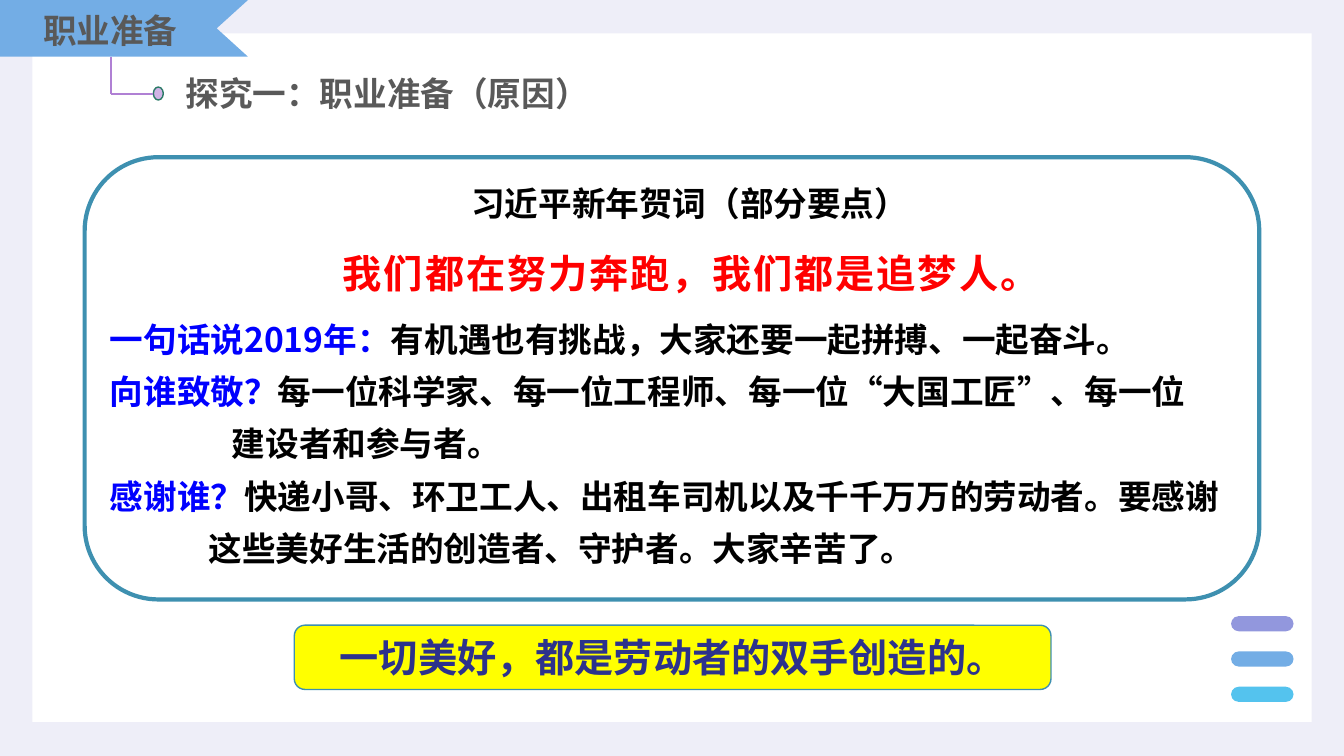
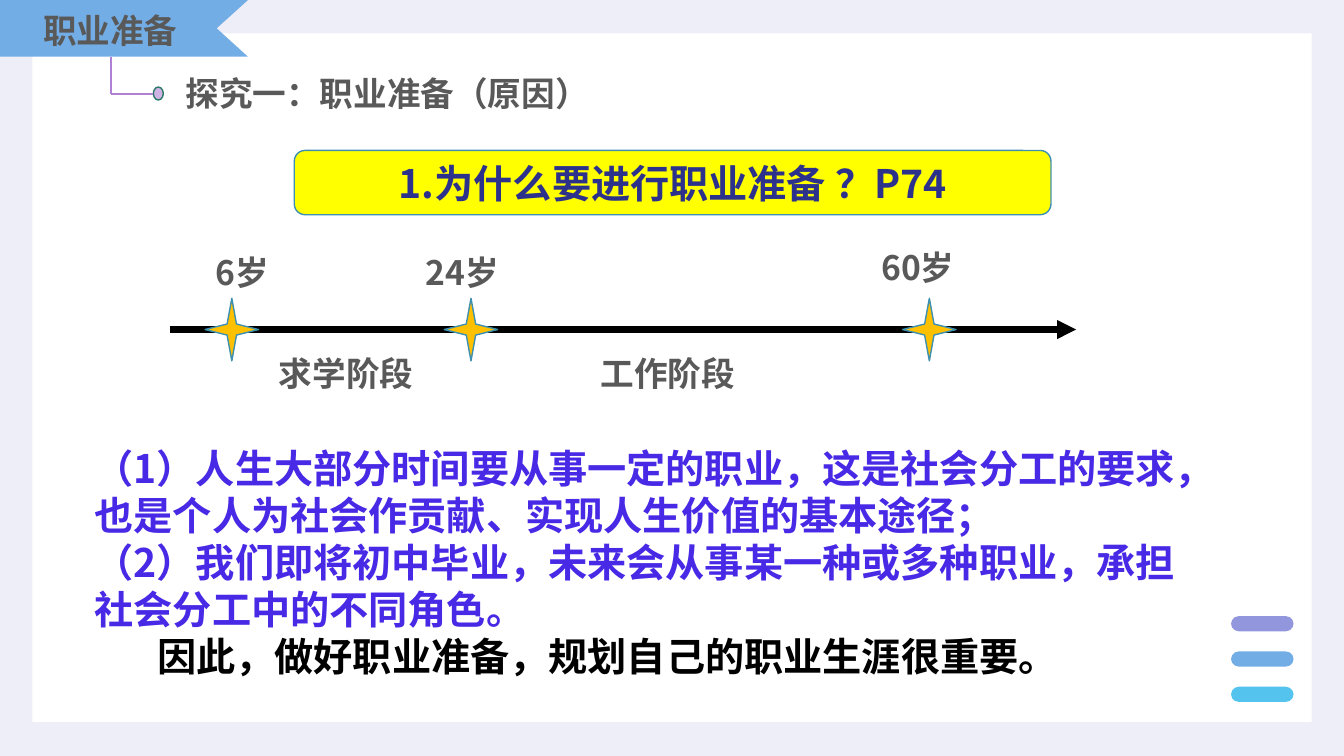
from dataclasses import dataclass

from pptx import Presentation
from pptx.dml.color import RGBColor as RGB
from pptx.enum.shapes import MSO_CONNECTOR as Link, MSO_SHAPE as Kind
from pptx.enum.text import MSO_ANCHOR as Anchor, MSO_AUTO_SIZE as Fit, PP_ALIGN as Align
from pptx.oxml.ns import qn
from pptx.util import Inches, Pt
from lxml.etree import SubElement

FONT = "Noto Sans CJK SC"
PALE = RGB(0xEE, 0xEE, 0xF8)
WHITE = RGB(0xFF, 0xFF, 0xFF)
BLACK = RGB(0, 0, 0)
GREY = RGB(0x59, 0x59, 0x59)
SKY = RGB(0x73, 0xAD, 0xE5)
CYAN = RGB(0x54, 0xC3, 0xEE)
LILAC = RGB(0x92, 0x97, 0xDD)
MAUVE = RGB(0xB0, 0x80, 0xD4)
PINK = RGB(0xD0, 0xB3, 0xE5)
GREEN = RGB(0x2B, 0x7A, 0x67)
TEAL = RGB(0x3E, 0x90, 0xB0)
YELLOW = RGB(0xFF, 0xFF, 0)
GOLD = RGB(0xFF, 0xC0, 0)
RED = RGB(0xFF, 0, 0)
BLUE = RGB(0, 0, 0xFF)
NAVY = RGB(0x2C, 0x32, 0x8C)
VIOLET = RGB(0x48, 0x29, 0xE5)


@dataclass
class Box:
    """An area in inches; areas inside it are given in percent of it."""
    left: float
    top: float
    wide: float
    high: float

    def spot(self, x, y):
        return self.left + self.wide * x / 100, self.top + self.high * y / 100

    def area(self, x, y, w, h):
        return Box(*self.spot(x, y), self.wide * w / 100, self.high * h / 100)

    def emu(self):
        return [Inches(v) for v in (self.left, self.top, self.wide, self.high)]


PAGE = Box(0, 0, 13.33, 7.5)


def write(frame, *paras, size=24, color=GREY, align=Align.LEFT,
          anchor=Anchor.TOP, lead=None, kern=0):
    """Each paragraph is a string or (indent in inches, (text, colour), ...)."""
    frame.word_wrap = True
    frame.auto_size = Fit.NONE
    frame.vertical_anchor = anchor
    for i, item in enumerate(paras):
        para = frame.add_paragraph() if i else frame.paragraphs[0]
        indent, *runs = (0, (item, color)) if isinstance(item, str) else item
        para.alignment = align
        if lead:
            para.line_spacing = lead
        if indent:
            para._p.get_or_add_pPr().set("marL", str(Inches(indent)))
        for text, tint in runs:
            run = para.add_run()
            run.text = text
            font = run.font
            font.name, font.size, font.bold = FONT, Pt(size), True
            font.color.rgb = tint
            props = run._r.get_or_add_rPr()
            if kern:
                props.set("spc", str(kern))
            SubElement(props, qn("a:ea")).set("typeface", FONT)


def label(slide, box, *paras, **style):
    write(slide.shapes.add_textbox(*box.emu()).text_frame, *paras, **style)


def paint(shape, fill=None, line=None, width=1):
    shape.shadow.inherit = False
    if fill is None:
        shape.fill.background()
    else:
        shape.fill.solid()
        shape.fill.fore_color.rgb = fill
    if line is None:
        shape.line.fill.background()
    else:
        shape.line.color.rgb = line
        shape.line.width = Pt(width)
    return shape


def draw(slide, kind, box, **look):
    return paint(slide.shapes.add_shape(kind, *box.emu()), **look)


def rule(slide, start, end, color, width, arrow=False):
    ends = [Inches(v) for v in (*start, *end)]
    line = slide.shapes.add_connector(Link.STRAIGHT, *ends)
    line.line.color.rgb = color
    line.line.width = Pt(width)
    props = line._element.spPr
    if arrow:
        SubElement(props.find(qn("a:ln")), qn("a:tailEnd")).set("type", "triangle")
    SubElement(props, qn("a:effectLst"))


def dress(deck, layout):
    """Put the white panel and the three pills on the layout."""
    back = deck.slide_master.background.fill
    back.solid()
    back.fore_color.rgb = PALE
    slide = deck.slides[0]
    items = [draw(slide, Kind.RECTANGLE, PAGE.area(2.4, 4.4, 95.2, 91.1), fill=WHITE)]
    for i, tint in enumerate((LILAC, SKY, CYAN)):
        pill = draw(slide, Kind.ROUNDED_RECTANGLE,
                    PAGE.area(91.6, 81.5 + 4.67 * i, 4.65, 2), fill=tint)
        pill.adjustments[0] = 0.5
        items.append(pill)
    for item in items:
        layout.shapes.element.append(item._element)


def ribbon(slide, box, text):
    pts = [box.spot(*p) for p in ((0, 0), (100, 0), (87.4, 50), (100, 100), (0, 100))]
    pts = [(Inches(x), Inches(y)) for x, y in pts]
    edge = slide.shapes.build_freeform(*pts[0])
    edge.add_line_segments(pts[1:], close=True)
    paint(edge.convert_to_shape(), fill=SKY)
    label(slide, box.area(4, 9, 81, 89), text, align=Align.CENTER)


def elbow(slide, box):
    bend = box.spot(0, 86)
    draw(slide, Kind.FLOWCHART_CONNECTOR, box.area(81, 70, 19, 30),
         fill=PINK, line=GREEN)
    rule(slide, box.spot(0, 0), bend, MAUVE, 1.5)
    rule(slide, bend, box.spot(81, 86), MAUVE, 1.5)


def head(slide):
    title = slide.shapes.title
    spot = PAGE.area(13.05, 8.93, 63.5, 6.7)
    title.left, title.top, title.width, title.height = spot.emu()
    write(title.text_frame, "探究一：职业准备（原因）")
    ribbon(slide, PAGE.area(0, 0, 18.45, 7.5), "职业准备")
    elbow(slide, PAGE.area(8.25, 7.5, 3.9, 5.73))


def banner(slide, box, text):
    plate = draw(slide, Kind.ROUNDED_RECTANGLE, box, fill=YELLOW, line=TEAL)
    write(plate.text_frame, text, size=28, color=NAVY,
          align=Align.CENTER, anchor=Anchor.MIDDLE)


def card(slide, box):
    label(slide, box.area(29.3, 2, 44.4, 14), "习近平新年贺词（部分要点）",
          color=BLACK, align=Align.CENTER, lead=1.3)
    label(slide, box.area(14.1, 16.4, 64.9, 16.2),
          (0.82, ("我们都在努力奔跑，我们都是追梦人。", RED)),
          size=28, lead=1.3, kern=140)
    label(slide, box.area(1.3, 32.6, 98, 62),
          (0, ("一句话说2019年：", BLUE),
           ("有机遇也有挑战，大家还要一起拼搏、一起奋斗。", BLACK)),
          (0, ("向谁致敬？", BLUE),
           ("每一位科学家、每一位工程师、每一位“大国工匠”、每一位", BLACK)),
          (1.21, ("建设者和参与者。", BLACK)),
          (0, ("感谢谁？", BLUE),
           ("快递小哥、环卫工人、出租车司机以及千千万万的劳动者。要感谢", BLACK)),
          (0.98, ("这些美好生活的创造者、守护者。大家辛苦了。", BLACK)),
          lead=1.3)
    draw(slide, Kind.ROUNDED_RECTANGLE, box, line=TEAL, width=3)


def axis(slide, box):
    """Time line with a star and an age at each turn, and stages between."""
    mid = 56
    rule(slide, box.spot(0, mid), box.spot(100, mid), BLACK, 4.5, arrow=True)
    for x, left, top, age in ((6.8, 3.9, 3.5, "6岁"), (33.2, 27.1, 3.5, "24岁"),
                              (83.8, 77.4, 0, "60岁")):
        draw(slide, Kind.STAR_4_POINT, box.area(x - 2.95, mid - 20, 5.9, 40),
             fill=GOLD, line=TEAL)
        label(slide, box.area(left, top, 18.3, 32), age)
    for left, stage in ((10.9, "求学阶段"), (46.4, "工作阶段")):
        label(slide, box.area(left, 67.7, 18.3, 32), stage)


def essay(slide, box):
    label(slide, box,
          "（1）人生大部分时间要从事一定的职业，这是社会分工的要求，"
          "也是个人为社会作贡献、实现人生价值的基本途径；",
          "（2）我们即将初中毕业，未来会从事某一种或多种职业，"
          "承担社会分工中的不同角色。",
          (0.62, ("因此，做好职业准备，规划自己的职业生涯很重要。", BLACK)),
          size=28, color=VIOLET)


def main():
    deck = Presentation()
    deck.slide_width, deck.slide_height = Inches(PAGE.wide), Inches(PAGE.high)
    layout = deck.slide_layouts[5]
    speech, reason = [deck.slides.add_slide(layout) for _ in range(2)]
    dress(deck, layout)
    for slide in (speech, reason):
        head(slide)

    card(speech, PAGE.area(6.3, 20.8, 87.4, 58.5))
    banner(speech, PAGE.area(21.9, 82.7, 56.3, 8.5), "一切美好，都是劳动者的双手创造的。")

    axis(reason, PAGE.area(12.67, 32, 67.4, 20.7))
    banner(reason, PAGE.area(21.9, 19.9, 56.3, 8.5), "1.为什么要进行职业准备 ？P74")
    essay(reason, PAGE.area(6.3, 58.1, 82.7, 32.8))

    deck.save("out.pptx")


if __name__ == "__main__":
    main()
